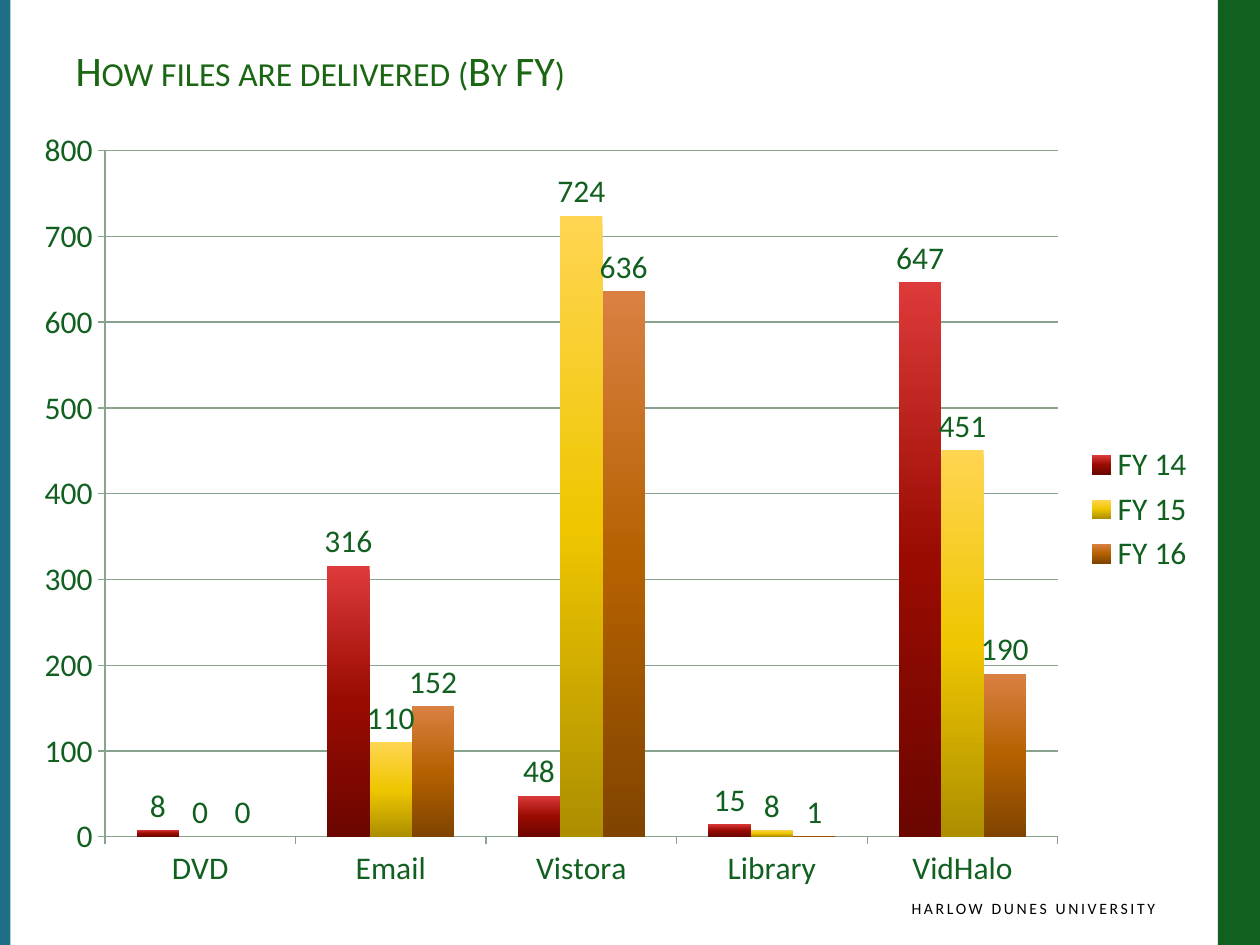
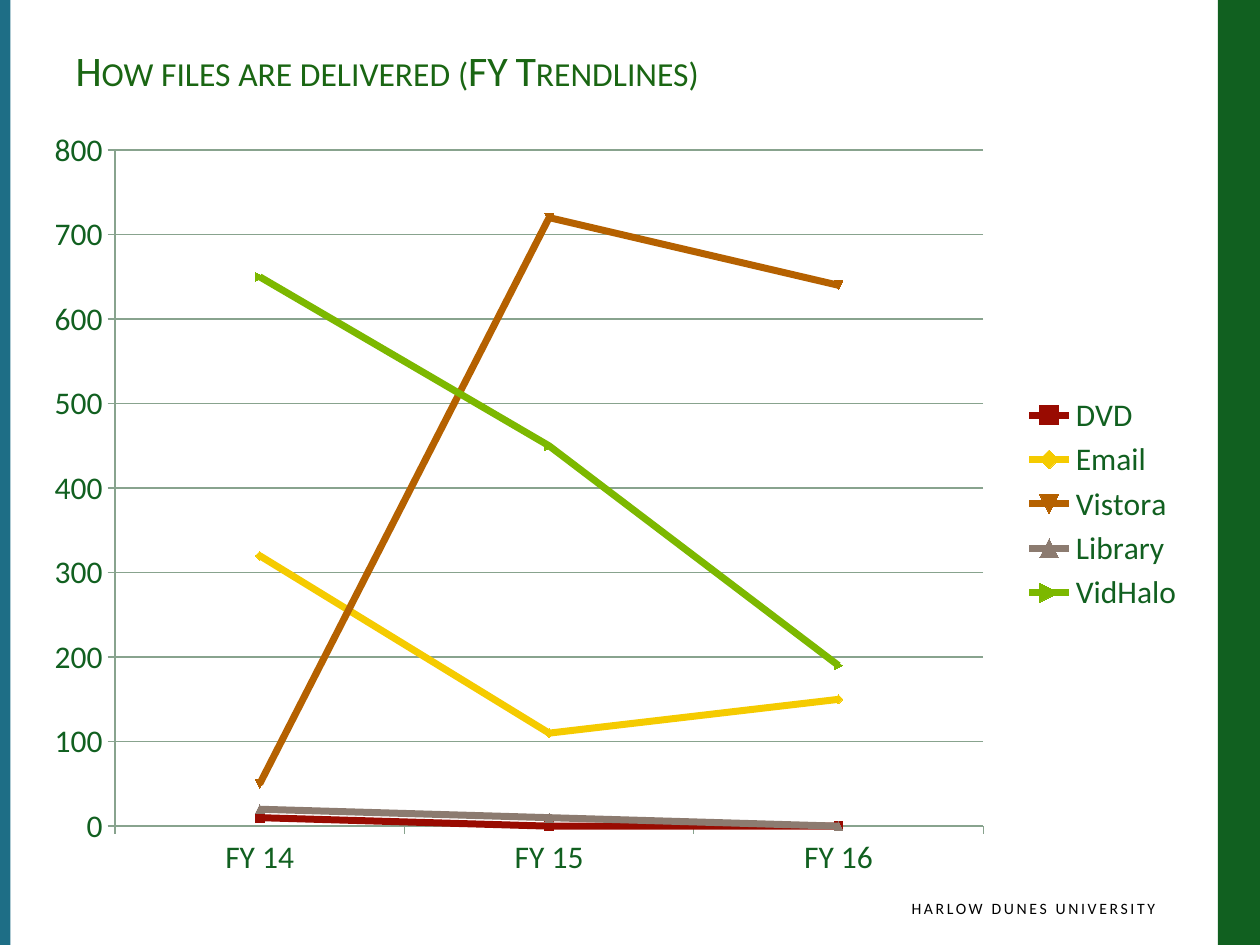
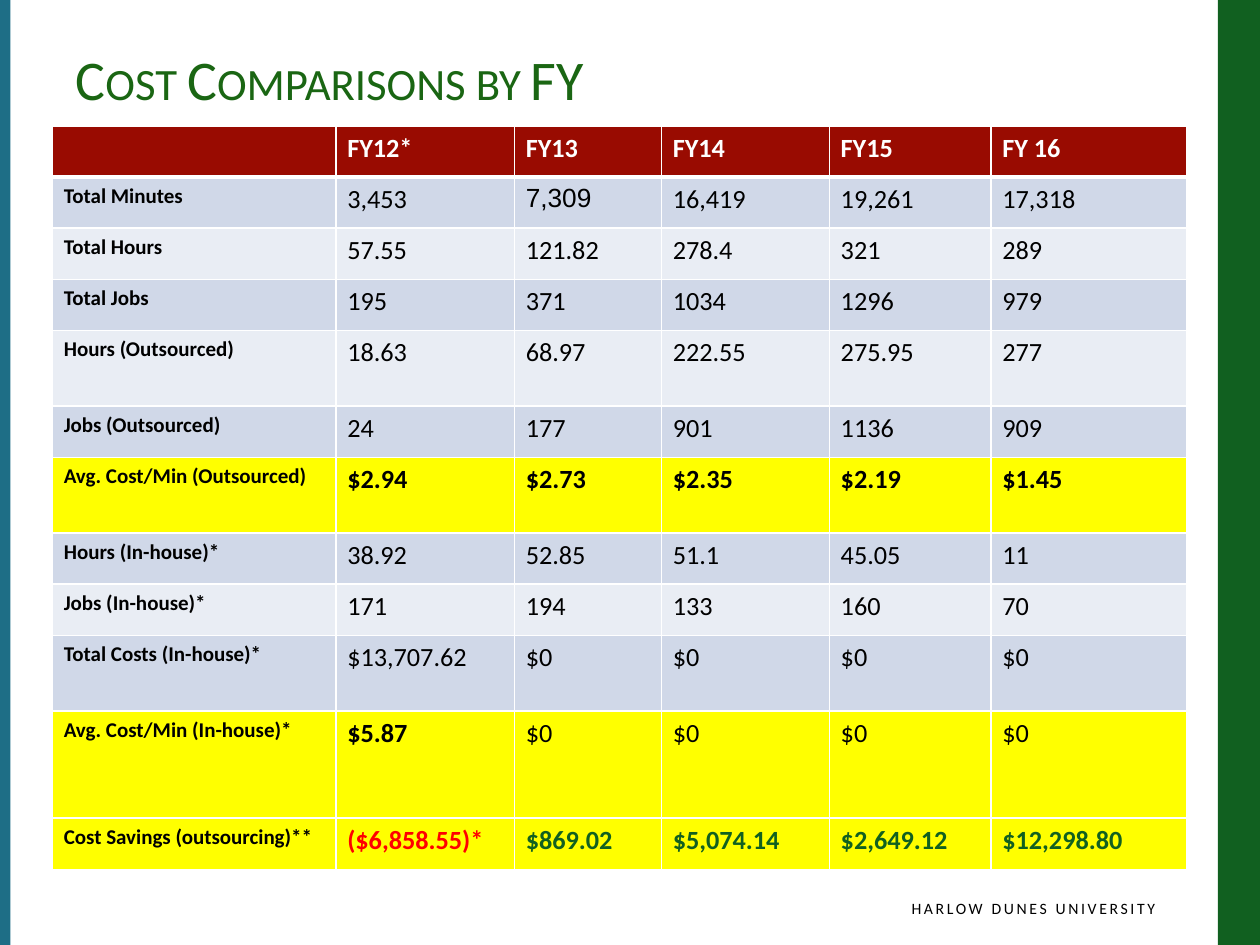
"""Build three slides on file delivery and captioning cost by fiscal year."""
from copy import deepcopy
from dataclasses import dataclass
from typing import Any, NamedTuple

from pptx import Presentation
from pptx import util as u
from pptx.chart import data as cd
from pptx.dml.color import RGBColor
from pptx.enum import chart as ch, shapes, text
from pptx.oxml import parse_xml
from pptx.oxml.ns import nsdecls, qn

WIDE, HIGH = u.Inches(10), u.Inches(7.5)
COLS, ROWS = 120, 90
FONT = "Calibri"

GREEN = RGBColor(0x11, 0x60, 0x20)
LEAF = RGBColor(0x1A, 0x66, 0x13)
TEAL = RGBColor(0x1E, 0x6E, 0x86)
GRID = RGBColor(0x88, 0xA3, 0x8E)
BLACK = RGBColor(0x00, 0x00, 0x00)
WHITE = RGBColor(0xFF, 0xFF, 0xFF)
RED = RGBColor(0xFF, 0x00, 0x00)
YELLOW = RGBColor(0xFF, 0xFF, 0x00)
BLUE = RGBColor(0xD0, 0xD8, 0xE8)
PALE = RGBColor(0xE9, 0xED, 0xF4)
BRICK = RGBColor(0x99, 0x0B, 0x01)
GOLD = RGBColor(0xF5, 0xCB, 0x00)
RUST = RGBColor(0xB5, 0x61, 0x00)
TAUPE = RGBColor(0x8C, 0x7B, 0x70)
LIME = RGBColor(0x7C, 0xB8, 0x00)

LINES = (BRICK, GOLD, RUST, TAUPE, LIME)
FADES = (
    (RGBColor(0xDD, 0x3A, 0x3A), BRICK, RGBColor(0x6B, 0x06, 0x00)),
    (RGBColor(0xFF, 0xD5, 0x52), RGBColor(0xEF, 0xC6, 0x00), RGBColor(0xAC, 0x8E, 0x00)),
    (RGBColor(0xDA, 0x80, 0x42), RUST, RGBColor(0x80, 0x44, 0x00)),
)

YEARS = ("FY 14", "FY 15", "FY 16")
USES = {
    "DVD": (8, 0, 0),
    "Email": (316, 110, 152),
    "Vistora": (48, 724, 636),
    "Library": (15, 8, 1),
    "VidHalo": (647, 451, 190),
}


class Box(NamedTuple):
    x: float
    y: float
    w: float
    h: float

    def emu(self) -> tuple[int, ...]:
        return across(self.x), down(self.y), across(self.w), down(self.h)


@dataclass
class Line:
    label: str
    vals: tuple[str, ...]
    high: float = 4.87
    lit: bool = False
    bold: int = 0
    inks: tuple[RGBColor, ...] = (BLACK,) * 5


HEAD = ("", "FY12*", "FY13", "FY14", "FY15", "FY 16")
WIDTHS = (27, 17, 14, 16, 15.4, 18.6)
COSTS = (
    Line("Total Minutes", ("3,453", "7,309", "16,419", "19,261", "17,318")),
    Line("Total Hours", ("57.55", "121.82", "278.4", "321", "289")),
    Line("Total Jobs", ("195", "371", "1034", "1296", "979")),
    Line("Hours (Outsourced)", ("18.63", "68.97", "222.55", "275.95", "277"), high=7.22),
    Line("Jobs (Outsourced)", ("24", "177", "901", "1136", "909")),
    Line("Avg. Cost/Min (Outsourced)", ("$2.94", "$2.73", "$2.35", "$2.19", "$1.45"),
         high=7.22, lit=True, bold=5),
    Line("Hours (In-house)*", ("38.92", "52.85", "51.1", "45.05", "11")),
    Line("Jobs (In-house)*", ("171", "194", "133", "160", "70")),
    Line("Total Costs (In-house)*", ("$13,707.62", "$0", "$0", "$0", "$0"), high=7.22),
    Line("Avg. Cost/Min (In-house)*", ("$5.87", "$0", "$0", "$0", "$0"),
         high=10.2, lit=True, bold=1),
    Line("Cost Savings (outsourcing)**",
         ("($6,858.55)*", "$869.02", "$5,074.14", "$2,649.12", "$12,298.80"),
         lit=True, bold=5, inks=(RED,) + (GREEN,) * 4),
)


def across(n: float) -> int:
    return round(WIDE * n / COLS)


def down(n: float) -> int:
    return round(HIGH * n / ROWS)


def write(frame: Any, words: str, *, size: float, ink: RGBColor, font: str = FONT,
          bold: bool = False, align: Any = text.PP_ALIGN.LEFT, **marks: str) -> None:
    para = frame.paragraphs[0]
    para.alignment = align
    run = para.add_run()
    run.text = words
    face = run.font
    face.name, face.size, face.bold = font, u.Pt(size), bold
    face.color.rgb = ink
    for key, val in marks.items():
        run._r.get_or_add_rPr().set(key, val)


def band(slide: Any, box: Box, ink: RGBColor) -> Any:
    bar = slide.shapes.add_shape(shapes.MSO_SHAPE.RECTANGLE, *box.emu())
    bar.shadow.inherit = False
    bar.fill.solid()
    bar.fill.fore_color.rgb = ink
    bar.line.fill.background()
    return bar


def foot(slide: Any) -> Any:
    note = slide.shapes.add_textbox(*Box(61, 85, 49, 4).emu())
    frame = note.text_frame
    frame.word_wrap = True
    frame.margin_right = 0
    write(frame, "HARLOW DUNES UNIVERSITY", size=9, ink=BLACK,
          align=text.PP_ALIGN.RIGHT, spc="150")
    return note


def dress(deck: Any, layout: Any) -> None:
    title = layout.placeholders[0]
    title.left, title.top, title.width, title.height = Box(6, 3.6, 97.2, 15).emu()
    title.text_frame.vertical_anchor = text.MSO_ANCHOR.TOP
    slide = deck.slides[0]
    for part in (band(slide, Box(116, 0, 4, ROWS), GREEN),
                 band(slide, Box(0, 0, 1, ROWS), TEAL), foot(slide)):
        layout.shapes._spTree.append(part._element)


def place(chart: Any, box: Box, plot: Box) -> None:
    area = chart._chartSpace.chart.plotArea
    for old in area.findall(qn("c:layout")):
        area.remove(old)
    sides = "".join(f'<c:{k} val="{v}"/>' for k, v in (
        ("layoutTarget", "inner"), ("xMode", "edge"), ("yMode", "edge"),
        ("x", (plot.x - box.x) / box.w), ("y", (plot.y - box.y) / box.h),
        ("w", plot.w / box.w), ("h", plot.h / box.h)))
    area.insert(0, parse_xml(f'<c:layout {nsdecls("c")}><c:manualLayout>{sides}'
                             '</c:manualLayout></c:layout>'))


def graph(slide: Any, kind: Any, box: Box, plot: Box, cats: Any, rows: Any) -> Any:
    data = cd.CategoryChartData()
    data.categories = cats
    for name, vals in rows:
        data.add_series(name, vals)
    chart = slide.shapes.add_chart(kind, *box.emu(), data).chart
    chart.has_title = False
    chart.font.name, chart.font.size = FONT, u.Pt(18)
    chart.font.color.rgb = GREEN
    chart.has_legend = True
    chart.legend.position = ch.XL_LEGEND_POSITION.RIGHT
    chart.legend.include_in_layout = False
    axis = chart.value_axis
    axis.minimum_scale, axis.maximum_scale, axis.major_unit = 0, 800, 100
    axis.has_major_gridlines = True
    for edge in (axis, chart.category_axis, axis.major_gridlines):
        edge.format.line.color.rgb = GRID
        edge.format.line.width = u.Pt(0.75)
    for edge in (axis, chart.category_axis):
        edge.major_tick_mark = ch.XL_TICK_MARK.OUTSIDE
    chart.plots[0].vary_by_categories = False
    place(chart, box, plot)
    return chart


def fade(row: Any, inks: tuple[RGBColor, ...]) -> None:
    fill = row.format.fill
    fill.gradient()
    fill.gradient_angle = 270
    first = next(row._element.iter(qn("a:gs")))
    first.addnext(deepcopy(first))
    for stop, ink, pos in zip(fill.gradient_stops, inks, (0, 0.5, 1)):
        stop.color.rgb, stop.position = ink, pos


def bars(slide: Any) -> None:
    chart = graph(slide, ch.XL_CHART_TYPE.COLUMN_CLUSTERED, Box(2, 11, 113, 75),
                  Box(10, 14.35, 90.75, 65.35), USES, zip(YEARS, zip(*USES.values())))
    plot = chart.plots[0]
    plot.gap_width, plot.overlap = 150, 0
    for row, inks in zip(plot.series, FADES):
        fade(row, inks)
        row.invert_if_negative = False
        tags = row.data_labels
        tags.show_value = True
        tags.position = ch.XL_LABEL_POSITION.OUTSIDE_END


def trends(slide: Any) -> None:
    tens = [(name, [round(val, -1) for val in vals]) for name, vals in USES.items()]
    chart = graph(slide, ch.XL_CHART_TYPE.LINE_MARKERS, Box(3, 11, 111, 74),
                  Box(10.95, 14.3, 82.7, 64.4), YEARS, tens)
    for row, ink in zip(chart.plots[0].series, LINES):
        row.smooth = False
        row.format.line.color.rgb = ink
        row.format.line.width = u.Pt(4)
        row.marker.size = 5
        row.marker.format.fill.solid()
        row.marker.format.fill.fore_color.rgb = ink
        row.marker.format.line.color.rgb = ink


def paint(cell: Any, ink: RGBColor, top: int = 1, low: int = 1) -> None:
    cell.fill.solid()
    cell.fill.fore_color.rgb = ink
    cell.margin_left = cell.margin_right = u.Inches(0.09)
    sides = (("L", 1), ("R", 1), ("T", top), ("B", low))
    for at, (side, wide) in enumerate(sides):
        cell._tc.get_or_add_tcPr().insert(at, parse_xml(
            f'<a:ln{side} {nsdecls("a")} w="{u.Pt(wide)}"><a:solidFill>'
            f'<a:srgbClr val="{WHITE}"/></a:solidFill></a:ln{side}>'))


def costs(slide: Any) -> None:
    box = Box(5, 12, sum(WIDTHS), 4.87 + sum(line.high for line in COSTS))
    table = slide.shapes.add_table(len(COSTS) + 1, len(HEAD), *box.emu()).table
    for col, wide in zip(table.columns, WIDTHS):
        col.width = across(wide)
    table.rows[0].height = down(4.87)
    for cell, words in zip(table.rows[0].cells, HEAD):
        paint(cell, BRICK, low=3)
        if words:
            write(cell.text_frame, words, size=15, ink=WHITE, bold=True)
    for i, line in enumerate(COSTS, 1):
        table.rows[i].height = down(line.high)
        fill = YELLOW if line.lit else BLUE if i % 2 else PALE
        for cell in table.rows[i].cells:
            paint(cell, fill, top=3 if i == 1 else 1)
        write(table.cell(i, 0).text_frame, line.label, size=12, ink=BLACK, bold=True)
        for j, (val, ink) in enumerate(zip(line.vals, line.inks), 1):
            write(table.cell(i, j).text_frame, val, size=15, ink=ink, bold=j <= line.bold,
                  font="Arial" if val == "7,309" else FONT)


def main() -> None:
    deck = Presentation()
    deck.slide_width, deck.slide_height = WIDE, HIGH
    layout = deck.slide_layouts[5]
    for words, size, draw in (
            ("How files are delivered (By FY)", 24, bars),
            ("How files are delivered (FY Trendlines)", 24, trends),
            ("Cost Comparisons by FY", 32, costs)):
        slide = deck.slides.add_slide(layout)
        write(slide.shapes.title.text_frame, words, size=size, ink=LEAF, cap="small")
        draw(slide)
    dress(deck, layout)
    deck.save("out.pptx")


if __name__ == "__main__":
    main()
